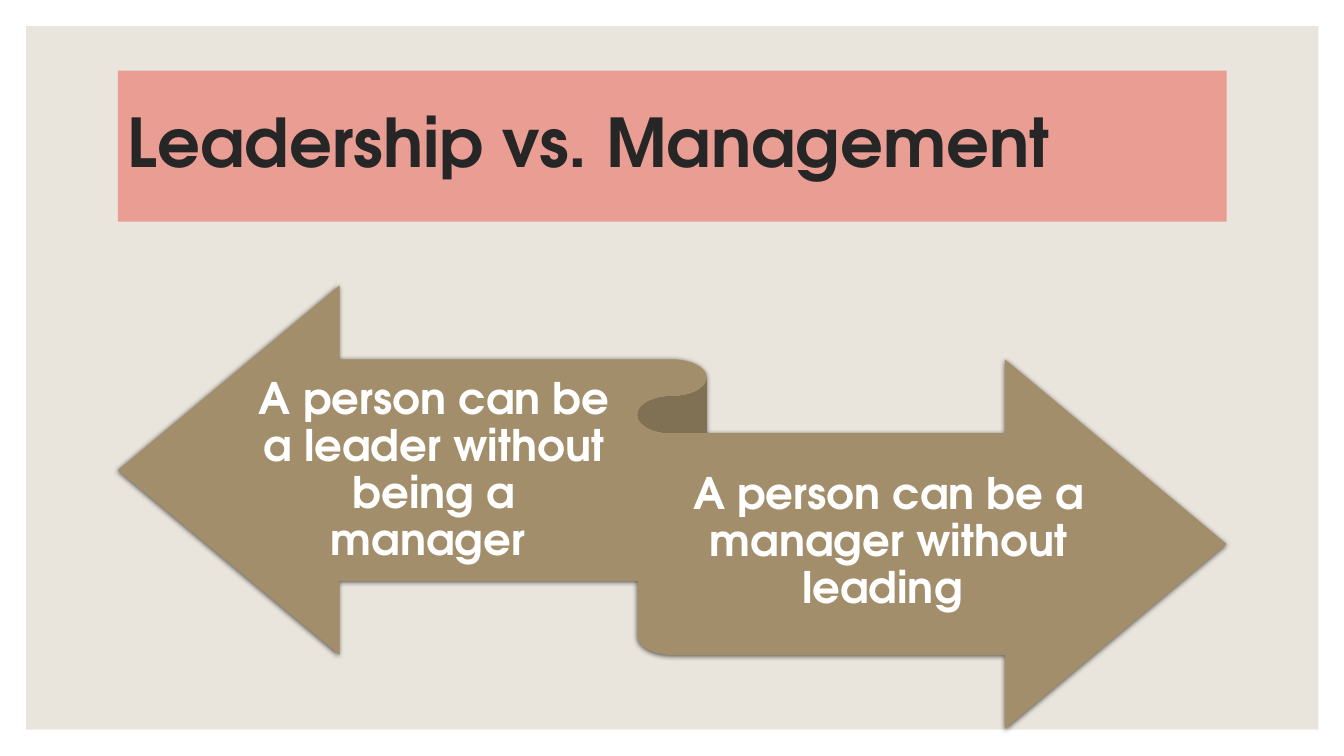
from lxml import etree
from pptx import Presentation, util as u
from pptx.dml.color import RGBColor
from pptx.enum import shapes, text
from pptx.oxml import parse_xml

COLOURS = {
    "backdrop": "E9E5DC",
    "title_band": "E99D93",
    "title_text": "262626",
    "ribbon_top": "A28E6A",
    "ribbon_bottom": "A28D68",
    "ribbon_text": "FFFFFF",
}
SHADOW = (
    '<a:effectLst xmlns:a="http://schemas.openxmlformats.org/drawingml/2006/main">'
    '<a:outerShdw blurRad="38100" dist="12700" dir="5400000" rotWithShape="0">'
    '<a:srgbClr val="000000"><a:alpha val="63000"/></a:srgbClr>'
    "</a:outerShdw></a:effectLst>"
)


def colour(name):
    return RGBColor.from_string(COLOURS[name])


def write(shape, wording, size, colour_name, alignment, frame_format):
    """Put one bold paragraph in the shape and format its text frame."""
    frame = shape.text_frame
    frame.text = wording
    for name, value in frame_format.items():
        setattr(frame, name, value)
    paragraph = frame.paragraphs[0]
    paragraph.alignment = alignment
    paragraph.line_spacing = 0.9
    font = paragraph.runs[0].font
    for name, value in {"name": "TeX Gyre Adventor", "size": u.Pt(size), "bold": True}.items():
        setattr(font, name, value)
    font.color.rgb = colour(colour_name)


presentation = Presentation()
presentation.slide_width, presentation.slide_height = u.Pt(960), u.Pt(540)
slide = presentation.slides.add_slide(presentation.slide_layouts[5])

# Backdrop, placed behind the title
backdrop = slide.shapes.add_shape(
    shapes.MSO_SHAPE.RECTANGLE, u.Pt(18.7), u.Pt(18.7), u.Pt(923), u.Pt(502.5))
backdrop.shadow.inherit = False
backdrop.fill.solid()
backdrop.fill.fore_color.rgb = colour("backdrop")
backdrop.line.fill.background()

# Title band
title = slide.shapes.title
backdrop.element.addnext(title.element)
title.left, title.top, title.width, title.height = (
    u.Pt(length) for length in (84.2, 50.4, 792, 108))
title.fill.solid()
title.fill.fore_color.rgb = colour("title_band")
frame_format = {
    "word_wrap": True,
    "auto_size": text.MSO_AUTO_SIZE.NONE,
    "vertical_anchor": text.MSO_ANCHOR.MIDDLE,
}
write(title, "Leadership vs. Management", 48, "title_text", text.PP_ALIGN.LEFT, frame_format)

# Two-way ribbon with a statement on each arrow
diagram = slide.shapes.add_group_shape()
ribbon = diagram.shapes.add_shape(
    shapes.MSO_SHAPE.LEFT_RIGHT_RIBBON, u.Pt(84.2), u.Pt(203.9), u.Pt(792), u.Pt(316.8))
ribbon.fill.gradient()
ribbon.fill.gradient_angle = 270
for stop, name in zip(ribbon.fill.gradient_stops, ("ribbon_top", "ribbon_bottom")):
    stop.color.rgb = colour(name)
ribbon.line.fill.background()
ribbon.element.spPr.append(parse_xml(SHADOW))

frame_format.update(
    margin_left=0, margin_right=0, margin_top=u.Pt(8.6), margin_bottom=u.Pt(9.4))
statements = [
    (179.3, 259.2, 261.4, "A person can be a leader without being a manager "),
    (480.2, 310.3, 308.9, "A person can be a manager without leading "),
]
for left, top, width, wording in statements:
    statement = diagram.shapes.add_textbox(u.Pt(left), u.Pt(top), u.Pt(width), u.Pt(155.5))
    write(statement, wording, 31, "ribbon_text", text.PP_ALIGN.CENTER, frame_format)

presentation.save("out.pptx")
